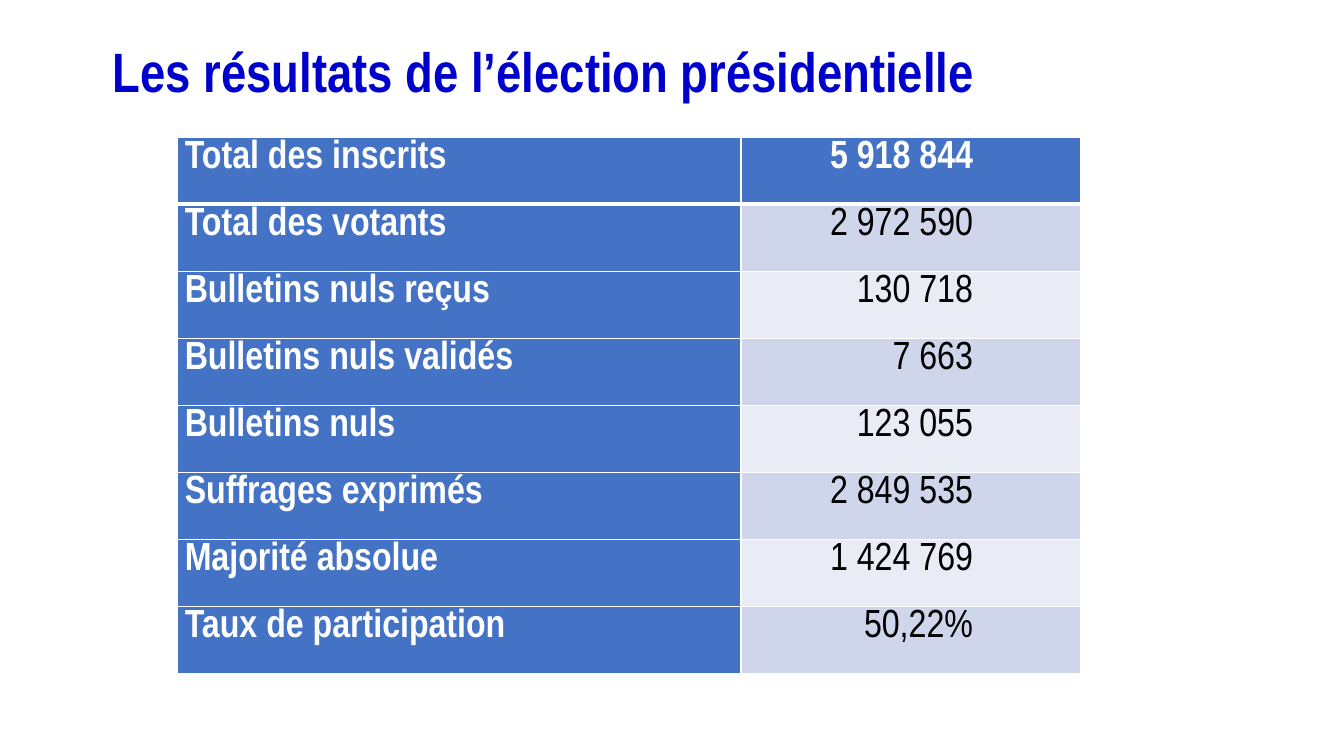
import pptx
import pptx.util
import pptx.dml.color
import pptx.enum.text
import pptx.oxml
import pptx.oxml.ns

Pt = pptx.util.Pt
RGBColor = pptx.dml.color.RGBColor
ALIGN = pptx.enum.text.PP_ALIGN
ANCHOR = pptx.enum.text.MSO_ANCHOR

TITLE_BLUE = RGBColor(0x00, 0x00, 0xCC)
HEADER_BLUE = RGBColor(0x44, 0x72, 0xC4)
BAND_DARK = RGBColor(0xCF, 0xD5, 0xEA)
BAND_LIGHT = RGBColor(0xE9, 0xEB, 0xF5)
WHITE = RGBColor(0xFF, 0xFF, 0xFF)
BLACK = RGBColor(0x00, 0x00, 0x00)

RESULTS = [
    ("Total des inscrits", "5 918 844"),
    ("Total des votants", "2 972 590"),
    ("Bulletins nuls reçus", "130 718"),
    ("Bulletins nuls validés", "7 663"),
    ("Bulletins nuls", "123 055"),
    ("Suffrages exprimés", "2 849 535"),
    ("Majorité absolue", "1 424 769"),
    ("Taux de participation", "50,22%"),
]


def write_text(frame, text, font, size, color, bold=False, align=ALIGN.LEFT,
               line_spacing=1.0, space_after=0):
    paragraph = frame.paragraphs[0]
    paragraph.alignment = align
    paragraph.line_spacing = line_spacing
    paragraph.space_after = Pt(space_after)
    run = paragraph.add_run()
    run.text = text
    run.font.name = font
    run.font.size = Pt(size)
    run.font.bold = bold
    run.font.color.rgb = color


class ResultsSlide:
    font = "Arial Narrow"
    title_size = 39.6
    cell_size = 28
    cell_margin = 5
    number_margin = 77
    thin_border = 1
    thick_border = 3

    def __init__(self, presentation):
        self.slide = presentation.slides.add_slide(presentation.slide_layouts[6])

    def title(self, text, left, top, width, height):
        shape = self.slide.shapes.add_textbox(Pt(left), Pt(top), Pt(width), Pt(height))
        frame = shape.text_frame
        frame.word_wrap = True
        frame.vertical_anchor = ANCHOR.MIDDLE
        write_text(frame, text, self.font, self.title_size, TITLE_BLUE,
                   bold=True, line_spacing=0.9)

    def border(self, cell, side, width):
        line = pptx.oxml.parse_xml(
            f'<a:ln{side} {pptx.oxml.ns.nsdecls("a")} w="{Pt(width)}">'
            f'<a:solidFill><a:srgbClr val="{WHITE}"/></a:solidFill></a:ln{side}>')
        cell._tc.get_or_add_tcPr().append(line)

    def cell(self, cell, text, row, column):
        is_label = column == 0
        is_strong = is_label or row == 0
        cell.margin_left = Pt(self.cell_margin)
        cell.margin_right = Pt(self.cell_margin if is_label else self.number_margin)
        cell.margin_top = cell.margin_bottom = Pt(0)
        thick_side = {0: "B", 1: "T"}.get(row)
        for side in "LRTB":
            self.border(cell, side, self.thick_border if side == thick_side else self.thin_border)
        band = BAND_DARK if row % 2 else BAND_LIGHT
        cell.fill.solid()
        cell.fill.fore_color.rgb = HEADER_BLUE if is_strong else band
        write_text(cell.text_frame, text, self.font, self.cell_size,
                   WHITE if is_strong else BLACK, bold=is_strong,
                   align=ALIGN.JUSTIFY if is_label else ALIGN.RIGHT,
                   line_spacing=1.07, space_after=8)

    def table(self, rows, left, top, column_widths, row_height):
        shape = self.slide.shapes.add_table(
            len(rows), len(column_widths), Pt(left), Pt(top),
            Pt(sum(column_widths)), Pt(row_height * len(rows)))
        table = shape.table
        table.first_row = False
        table.horz_banding = False
        for column, width in zip(table.columns, column_widths):
            column.width = Pt(width)
        for row, texts in enumerate(rows):
            table.rows[row].height = Pt(row_height)
            for column, text in enumerate(texts):
                self.cell(table.cell(row, column), text, row, column)


def main():
    presentation = pptx.Presentation()
    presentation.slide_width = Pt(960)
    presentation.slide_height = Pt(540)
    slide = ResultsSlide(presentation)
    slide.title("Les résultats de l’élection présidentielle", 73.5, 28, 828, 50.4)
    slide.table(RESULTS, 127, 98, (402.3, 242.6), 47.9)
    presentation.save("out.pptx")


if __name__ == "__main__":
    main()
